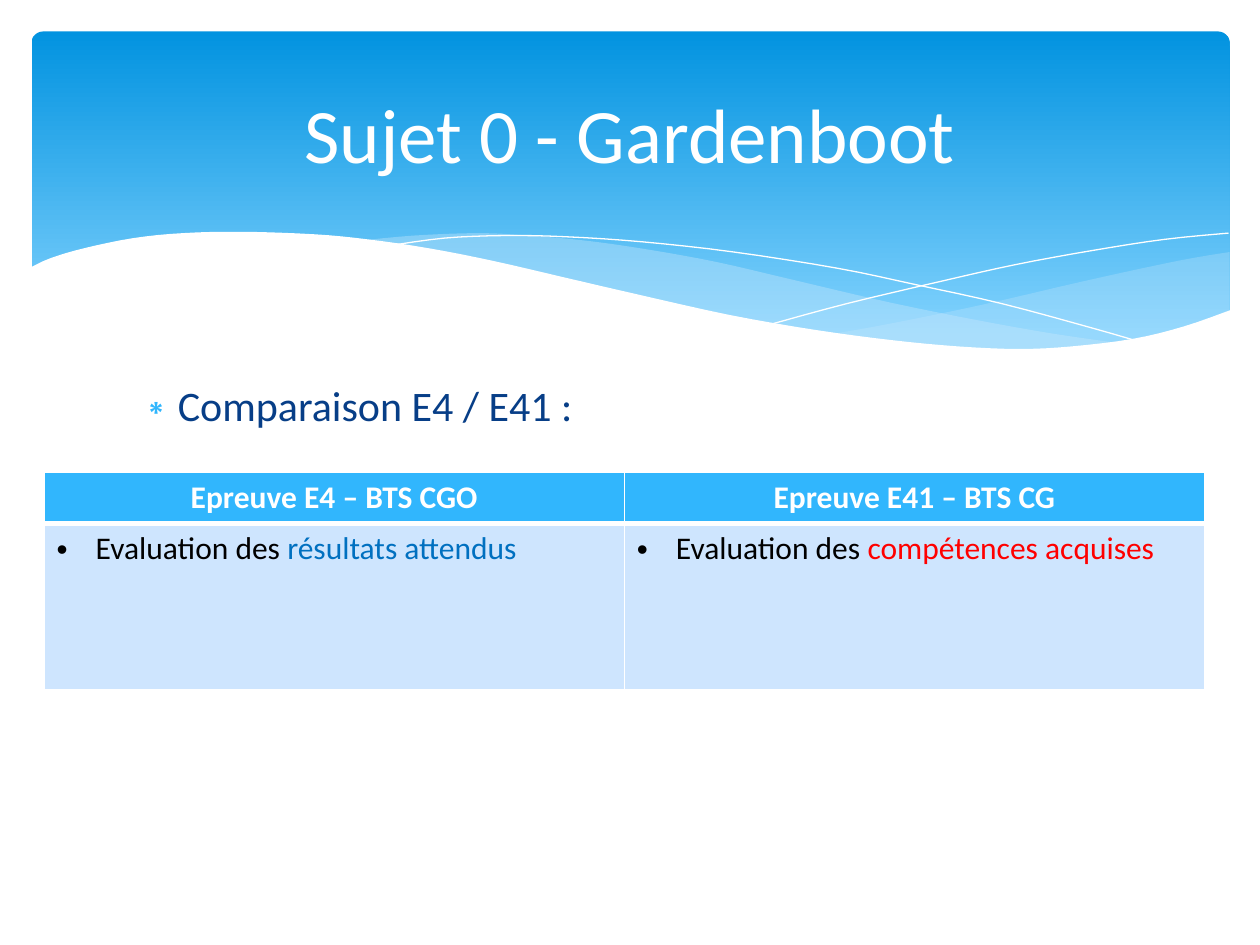
from dataclasses import dataclass
from typing import Optional

from lxml import etree
from pptx import Presentation
from pptx.dml.color import RGBColor
from pptx.enum import shapes, text
from pptx.oxml import ns
from pptx.util import Inches, Pt

Points = tuple[tuple[float, float], ...]


@dataclass(frozen=True)
class Theme:
    """Colours, font and type sizes of the slide."""
    font: str = "Calibri"
    title: float = 44
    body: float = 24
    cell: float = 18
    white: str = "FFFFFF"
    black: str = "000000"
    sky_top: str = "0293E0"
    sky_bottom: str = "83D3FE"
    wave: str = "C6E7FC"
    accent: str = "31B6FD"
    navy: str = "073E87"
    pale: str = "CEE5FE"
    blue: str = "0070C0"
    red: str = "FF0000"


T = Theme()


@dataclass(frozen=True)
class Wave:
    """A band or line made of smooth curves joined at corners."""
    curves: tuple[Points, ...]
    fill: Optional[str] = None
    alpha: int = 100


@dataclass(frozen=True)
class Exam:
    """One column of the comparison."""
    heading: str
    lead: str
    focus: str
    color: str


WAVES = (
    Wave((((9.76, 2), (9.35, 2.07), (8.61, 2.23), (7.79, 2.42), (7.06, 2.57), (6.61, 2.65)),
          ((6.61, 2.65), (7.05, 2.71), (7.57, 2.76), (8.03, 2.78), (8.54, 2.76), (8.97, 2.7),
           (9.35, 2.62), (9.76, 2.47))), T.wave, 29),
    Wave((((8.93, 2.73), (8.37, 2.65), (7.75, 2.54), (7.06, 2.4), (6.29, 2.22), (5.69, 2.08),
           (5.14, 1.98), (4.65, 1.91), (4.2, 1.87), (3.8, 1.85), (3.28, 1.87), (2.86, 1.91)),
          ((2.86, 1.91), (3.42, 1.99), (4.04, 2.11), (4.91, 2.32), (5.66, 2.48), (6.34, 2.61),
           (6.95, 2.7), (7.48, 2.76), (8.07, 2.78), (8.57, 2.77), (8.93, 2.73))), T.wave, 40),
    Wave((((3.09, 1.95), (3.53, 1.89), (4.01, 1.87), (4.5, 1.88), (5.1, 1.92), (5.82, 2),
           (6.65, 2.13), (7.27, 2.26), (7.95, 2.41), (8.69, 2.61), (9.07, 2.72)),)),
    Wave((((6.13, 2.57), (6.72, 2.41), (7.48, 2.23), (8.06, 2.1), (8.66, 1.99),
           (9.24, 1.9), (9.75, 1.85)),)),
    Wave((((9.77, 2.46), (9.4, 2.59), (8.99, 2.69), (8.5, 2.75), (8.09, 2.77), (7.61, 2.75),
           (7.08, 2.7), (6.48, 2.62), (5.79, 2.5), (5.03, 2.33), (4.47, 2.2), (3.91, 2.07),
           (3.4, 1.97), (2.92, 1.9), (2.5, 1.86), (1.93, 1.84), (1.46, 1.85), (1.06, 1.89),
           (0.67, 1.97), (0.4, 2.05), (0.23, 2.13)),
          ((0.23, 3.29), (9.77, 3.29))), T.white),
)

EXAMS = (
    Exam("Epreuve E4 – BTS CGO", "Evaluation des ", "résultats attendus", T.blue),
    Exam("Epreuve E41 – BTS CG", "Evaluation des ", "compétences acquises", T.red),
)


def smooth(points: Points, steps: int = 4) -> list[tuple[float, float]]:
    """Sample a Catmull-Rom curve through the points."""
    ends = (points[0], *points, points[-1])
    curve = [points[0]]
    for a, b, c, d in zip(ends, ends[1:], ends[2:], ends[3:]):
        for t in (i / steps for i in range(1, steps + 1)):
            curve.append(tuple(
                (2 * q + (r - p) * t + (2 * p - 5 * q + 4 * r - s) * t ** 2
                 + (3 * q - p - 3 * r + s) * t ** 3) / 2
                for p, q, r, s in zip(a, b, c, d)))
    return curve


def rgb(value: str) -> RGBColor:
    """Turn a hex string into a colour."""
    return RGBColor.from_string(value)


def paint(fill, color: str) -> None:
    """Apply a solid fill."""
    fill.solid()
    fill.fore_color.rgb = rgb(color)


def style(r, size: float, color: str, bold: bool = False) -> None:
    """Format one run."""
    r.font.name, r.font.size, r.font.bold = T.font, Pt(size), bold
    r.font.color.rgb = rgb(color)


def bullet(p, char: str, indent: float, color: Optional[str] = None) -> None:
    """Give a paragraph a hanging bullet."""
    props = p._p.get_or_add_pPr()
    props.set("marL", str(Inches(indent)))
    props.set("indent", str(-Inches(indent)))
    if color:
        holder = etree.SubElement(props, ns.qn("a:buClr"))
        etree.SubElement(holder, ns.qn("a:srgbClr"), val=color)
    etree.SubElement(props, ns.qn("a:buFont"), typeface="Arial")
    etree.SubElement(props, ns.qn("a:buChar"), char=char)


def draw_sky(s) -> None:
    """Draw the rounded gradient banner."""
    sp = s.shapes.add_shape(shapes.MSO_SHAPE.ROUNDED_RECTANGLE,
                            Inches(0.25), Inches(0.25), Inches(9.51), Inches(2.7))
    sp.adjustments[0] = 0.034
    sp.shadow.inherit = False
    sp.line.fill.background()
    sp.fill.gradient()
    sp.fill.gradient_angle = 270
    for stop, place, color in zip(sp.fill.gradient_stops, (0, 0.9), (T.sky_top, T.sky_bottom)):
        stop.position = place
        stop.color.rgb = rgb(color)


def draw_wave(s, wave: Wave) -> None:
    """Draw a filled band, or a hairline when it has no fill."""
    points = [(Inches(x), Inches(y)) for curve in wave.curves for x, y in smooth(curve)]
    builder = s.shapes.build_freeform(*points[0], scale=1.0)
    builder.add_line_segments(points[1:], close=wave.fill is not None)
    sp = builder.convert_to_shape()
    sp.shadow.inherit = False
    if wave.fill is None:
        sp.fill.background()
        sp.line.color.rgb = rgb(T.white)
        sp.line.width = 0
        return
    sp.line.fill.background()
    paint(sp.fill, wave.fill)
    color = sp._element.spPr.find(".//" + ns.qn("a:srgbClr"))
    etree.SubElement(color, ns.qn("a:alpha"), val=str(wave.alpha * 1000))


def draw_title(s, label: str) -> None:
    """Place the title in front of the banner."""
    sp = s.shapes.title
    sp.left, sp.top, sp.width, sp.height = Inches(0.5), Inches(0.37), Inches(9), Inches(1.37)
    s.shapes._spTree.append(sp._element)
    tf = sp.text_frame
    tf.text = label
    tf.vertical_anchor = text.MSO_ANCHOR.MIDDLE
    tf.paragraphs[0].alignment = text.PP_ALIGN.CENTER
    style(tf.paragraphs[0].runs[0], T.title, T.white)


def draw_lead(s, label: str) -> None:
    """Write the bulleted line above the table."""
    tf = s.shapes.add_textbox(Inches(0.98), Inches(2.96), Inches(8.1), Inches(0.71)).text_frame
    tf.word_wrap = True
    p = tf.paragraphs[0]
    p.text = label
    p.space_before = Pt(T.body * 0.2)
    bullet(p, "∗", 0.3, T.accent)
    style(p.runs[0], T.body, T.navy)


def finish_cell(cell, color: str, top: float, bottom: float) -> None:
    """Fill a cell and rule its four sides in white."""
    paint(cell.fill, color)
    props = cell._tc.get_or_add_tcPr()
    for i, (side, width) in enumerate(zip("LRTB", (1, 1, top, bottom))):
        line = etree.Element(ns.qn(f"a:ln{side}"), w=str(Pt(width)))
        solid = etree.SubElement(line, ns.qn("a:solidFill"))
        etree.SubElement(solid, ns.qn("a:srgbClr"), val=T.white)
        props.insert(i, line)


def draw_table(s, exams: tuple[Exam, ...]) -> None:
    """Compare the exams, one per column."""
    table = s.shapes.add_table(2, len(exams), Inches(0.35), Inches(3.75),
                               Inches(9.21), Inches(1.72)).table
    table.rows[0].height, table.rows[1].height = Inches(0.4), Inches(1.32)
    for i, exam in enumerate(exams):
        head, body = table.cell(0, i), table.cell(1, i)
        finish_cell(head, T.accent, 1, 3)
        finish_cell(body, T.pale, 3, 1)
        head.vertical_anchor = text.MSO_ANCHOR.MIDDLE
        p = head.text_frame.paragraphs[0]
        p.text = exam.heading
        p.alignment = text.PP_ALIGN.CENTER
        style(p.runs[0], T.cell, T.white, bold=True)
        p = body.text_frame.paragraphs[0]
        bullet(p, "•", 0.31)
        for label, color in ((exam.lead, T.black), (exam.focus, exam.color)):
            r = p.add_run()
            r.text = label
            style(r, T.cell, color)


def main() -> None:
    """Build and save the slide."""
    prs = Presentation()
    prs.slide_width, prs.slide_height = Inches(10), Inches(7.5)
    s = prs.slides.add_slide(prs.slide_layouts[5])
    draw_sky(s)
    for wave in WAVES:
        draw_wave(s, wave)
    draw_lead(s, "Comparaison E4 / E41 :")
    draw_title(s, "Sujet 0 - Gardenboot")
    draw_table(s, EXAMS)
    prs.save("out.pptx")


if __name__ == "__main__":
    main()
